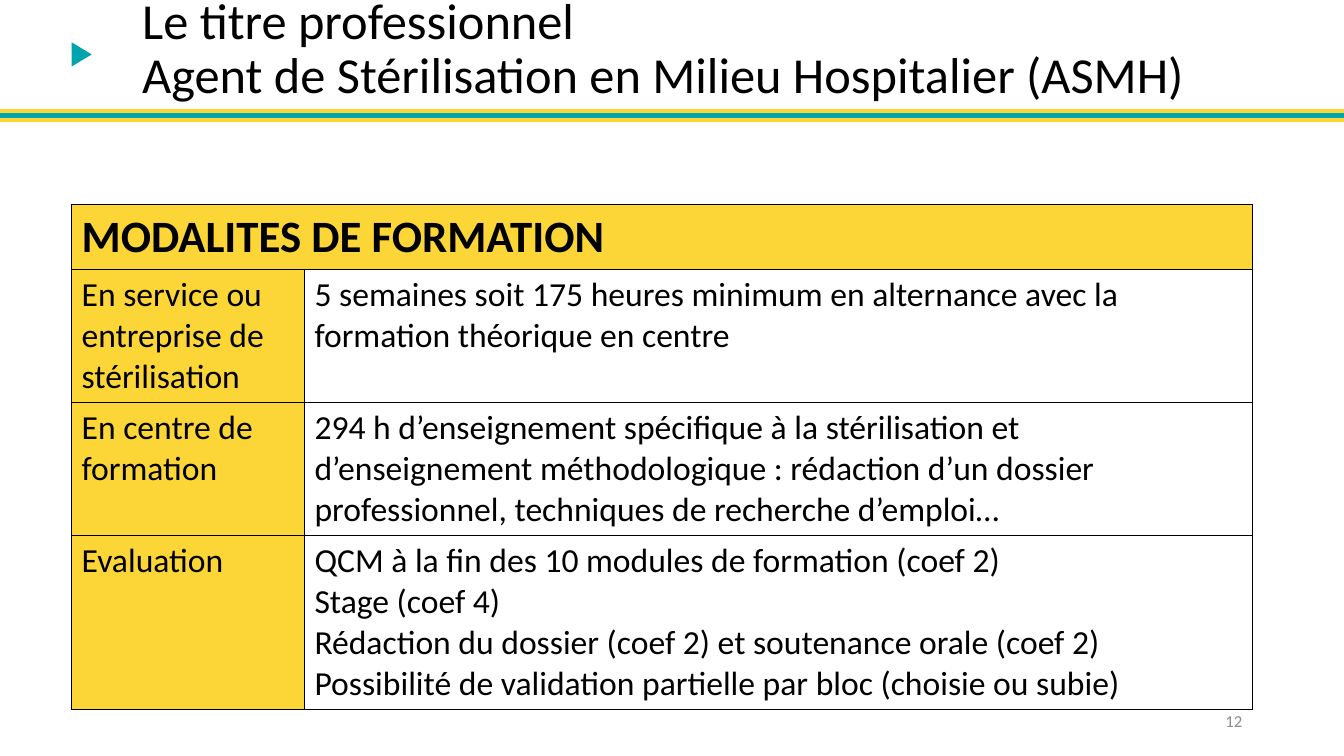
from lxml import etree
from pptx import Presentation
from pptx.dml.color import RGBColor
from pptx.enum.shapes import MSO_CONNECTOR, MSO_SHAPE
from pptx.enum.text import MSO_ANCHOR, MSO_AUTO_SIZE, PP_ALIGN
from pptx.oxml.ns import qn
from pptx.util import Inches, Pt

STRAIGHT = MSO_CONNECTOR.STRAIGHT
TRIANGLE = MSO_SHAPE.ISOSCELES_TRIANGLE
BOTTOM, MIDDLE = MSO_ANCHOR.BOTTOM, MSO_ANCHOR.MIDDLE
LEFT, RIGHT = PP_ALIGN.LEFT, PP_ALIGN.RIGHT
FIXED_SIZE = MSO_AUTO_SIZE.NONE

YELLOW = RGBColor(0xFC, 0xD6, 0x37)
TEAL = RGBColor(0x00, 0xA4, 0xAF)
BLACK = RGBColor(0x00, 0x00, 0x00)
WHITE = RGBColor(0xFF, 0xFF, 0xFF)
GREY = RGBColor(0x8C, 0x8C, 0x8C)
FONT = "Calibri"

# Content
TITLE = "Le titre professionnel\vAgent de Stérilisation en Milieu Hospitalier (ASMH)"
PAGE_NUMBER = "12"
HEADING = "MODALITES DE FORMATION"
MODALITIES = [
    ("En service ou entreprise de stérilisation",
     ["5 semaines soit 175 heures minimum en alternance avec la formation théorique en centre"]),
    ("En centre de formation",
     ["294 h d’enseignement spécifique à la stérilisation et d’enseignement méthodologique : "
      "rédaction d’un dossier professionnel, techniques de recherche d’emploi…"]),
    ("Evaluation",
     ["QCM à la fin des 10 modules de formation (coef 2)",
      "Stage (coef 4)",
      "Rédaction du dossier (coef 2) et soutenance orale (coef 2)",
      "Possibilité de validation partielle par bloc (choisie ou subie)"]),
]
BAND = [(1.1, YELLOW, 3), (1.15, TEAL, 4.5), (1.19, YELLOW, 3)]  # y, colour, points
COLUMN_WIDTHS = [2.31, 9.4]
ROW_HEIGHTS = [0.64, 1.32, 1.32, 1.73]


def set_font(paragraph, size, color, bold=False):
    font = paragraph.font
    font.name, font.size, font.bold = FONT, Pt(size), bold
    font.color.rgb = color


def add_borders(cell):
    properties = cell._tc.get_or_add_tcPr()
    for side in ("a:lnL", "a:lnR", "a:lnT", "a:lnB"):
        border = etree.SubElement(properties, qn(side), w=str(Pt(1)))
        fill = etree.SubElement(border, qn("a:solidFill"))
        etree.SubElement(fill, qn("a:srgbClr"), val=str(BLACK))


def fill_cell(cell, text, color, size=24, bold=False):
    cell.text = text
    for paragraph in cell.text_frame.paragraphs:
        set_font(paragraph, size, BLACK, bold)
    cell.fill.solid()
    cell.fill.fore_color.rgb = color


prs = Presentation()
prs.slide_width, prs.slide_height = Inches(13.33), Inches(7.5)
slide = prs.slides.add_slide(prs.slide_layouts[5])
shapes = slide.shapes

# Coloured band under the title
for y, color, width in BAND:
    stripe = shapes.add_connector(STRAIGHT, Inches(-0.03), Inches(y), Inches(13.33), Inches(y))
    stripe.line.color.rgb = color
    stripe.line.width = Pt(width)
    etree.SubElement(stripe._element.spPr, qn("a:effectLst"))

# Title and its marker
title = shapes.title
title.left, title.top = Inches(1.31), Inches(0.31)
title.width, title.height = Inches(12.2), Inches(0.78)
title.text_frame.text = TITLE
title.text_frame.auto_size = FIXED_SIZE
title.text_frame.vertical_anchor = BOTTOM
title_line = title.text_frame.paragraphs[0]
title_line.alignment = LEFT
title_line.line_spacing = 0.9
set_font(title_line, 36, BLACK)

marker = shapes.add_shape(TRIANGLE, Inches(0.69), Inches(0.44), Inches(0.24), Inches(0.2))
marker.rotation = 90
marker.shadow.inherit = False
marker.fill.solid()
marker.fill.fore_color.rgb = TEAL
marker.line.fill.background()

# Page number
page = shapes.add_textbox(Inches(9.42), Inches(6.95), Inches(3), Inches(0.4)).text_frame
page.word_wrap = True
page.vertical_anchor = MIDDLE
page.text = PAGE_NUMBER
page.paragraphs[0].alignment = RIGHT
set_font(page.paragraphs[0], 12, GREY)

# Training table
table = shapes.add_table(
    len(ROW_HEIGHTS), len(COLUMN_WIDTHS), Inches(0.71), Inches(2.03),
    Inches(sum(COLUMN_WIDTHS)), Inches(sum(ROW_HEIGHTS))).table
for column, width in zip(table.columns, COLUMN_WIDTHS):
    column.width = Inches(width)
for row, height in zip(table.rows, ROW_HEIGHTS):
    row.height = Inches(height)
for cell in table.iter_cells():
    add_borders(cell)

table.cell(0, 0).merge(table.cell(0, 1))
fill_cell(table.cell(0, 0), HEADING, YELLOW, size=32, bold=True)
for row, (label, details) in enumerate(MODALITIES, start=1):
    fill_cell(table.cell(row, 0), label, YELLOW)
    fill_cell(table.cell(row, 1), "\n".join(details), WHITE)

prs.save("out.pptx")
